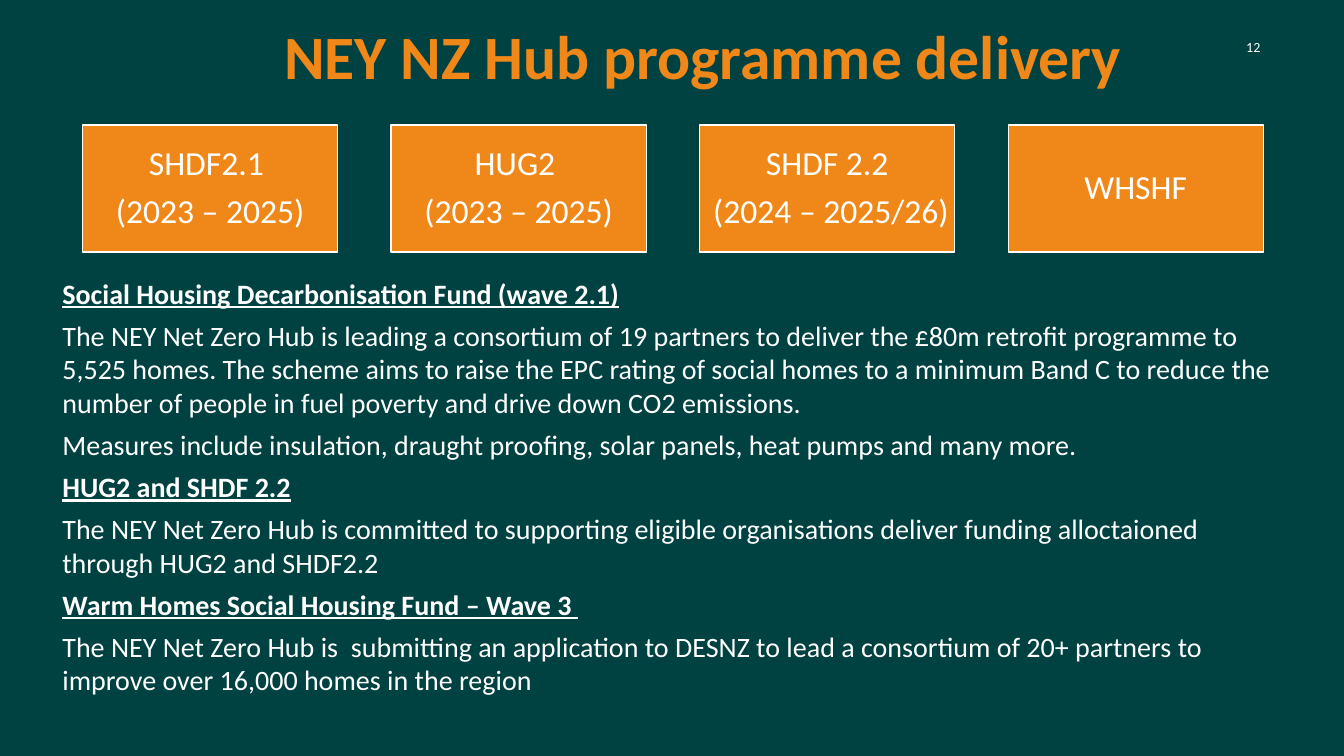
import dataclasses

import pptx
import pptx.dml.color
import pptx.enum.shapes
import pptx.enum.text
import pptx.util

Inches = pptx.util.Inches
Align = pptx.enum.text.PP_ALIGN
Anchor = pptx.enum.text.MSO_ANCHOR


@dataclasses.dataclass(frozen=True)
class Theme:
    font: str = "Calibri"
    background: str = "004141"
    accent: str = "F08719"
    light: str = "FFFFFF"
    title_size: int = 44
    card_size: int = 24
    body_size: int = 20
    number_size: int = 10


def rgb(value):
    return pptx.dml.color.RGBColor.from_string(value)


def write_paragraph(paragraph, text, *, font, size, color, heading=False,
                    align=Align.LEFT, line_spacing=1.0, space_after=0, indent=0):
    paragraph.alignment = align
    paragraph.line_spacing = line_spacing
    paragraph.space_after = pptx.util.Pt(space_after)
    if indent:
        properties = paragraph._p.get_or_add_pPr()
        properties.set("marL", str(Inches(indent)))
        properties.set("indent", "0")
    run = paragraph.add_run()
    run.text = text
    run.font.name = font
    run.font.size = pptx.util.Pt(size)
    run.font.color.rgb = rgb(color)
    run.font.bold = heading
    run.font.underline = heading


class SlideBuilder:
    def __init__(self, slide, theme):
        self.slide = slide
        self.theme = theme
        fill = slide.background.fill
        fill.solid()
        fill.fore_color.rgb = rgb(theme.background)

    def fill_frame(self, frame, texts, margins, headings=(), **text_format):
        frame.word_wrap = True
        frame.margin_left = frame.margin_right = Inches(margins[0])
        frame.margin_top = frame.margin_bottom = Inches(margins[1])
        for index, text in enumerate(texts):
            paragraph = frame.add_paragraph() if index else frame.paragraphs[0]
            write_paragraph(paragraph, text, font=self.theme.font,
                            heading=text in headings, **text_format)

    def text_box(self, box, texts, margins=(0, 0), **text_format):
        shape = self.slide.shapes.add_textbox(*map(Inches, box))
        self.fill_frame(shape.text_frame, texts, margins, **text_format)
        return shape

    def card(self, box, texts):
        shape = self.slide.shapes.add_shape(
            pptx.enum.shapes.MSO_SHAPE.RECTANGLE, *map(Inches, box))
        shape.shadow.inherit = False
        shape.fill.solid()
        shape.fill.fore_color.rgb = rgb(self.theme.accent)
        shape.line.color.rgb = rgb(self.theme.light)
        shape.line.width = pptx.util.Pt(1)
        shape.text_frame.vertical_anchor = Anchor.MIDDLE
        self.fill_frame(shape.text_frame, texts, (0.02, 0.02),
                        size=self.theme.card_size, color=self.theme.light,
                        align=Align.CENTER, line_spacing=0.9, space_after=8.4)

    def title(self, box, text):
        shape = self.text_box(box, [text], size=self.theme.title_size,
                              color=self.theme.accent, line_spacing=0.9)
        run = shape.text_frame.paragraphs[0].runs[0]
        run.font.bold = True

    def page_number(self, box, text):
        self.text_box(box, [text], size=self.theme.number_size,
                      color=self.theme.light, align=Align.RIGHT)

    def body(self, box, sections):
        texts = [text for heading, details in sections for text in (heading, *details)]
        self.text_box(box, texts, (0.1, 0.05),
                      headings=[heading for heading, _ in sections],
                      size=self.theme.body_size, color=self.theme.light,
                      space_after=6, indent=0.25)


PROGRAMMES = [
    ["SHDF2.1 ", "(2023 – 2025)"],
    ["HUG2 ", "(2023 – 2025)"],
    ["SHDF 2.2", " (2024 – 2025/26)"],
    ["WHSHF"],
]

SECTIONS = [
    ("Social Housing Decarbonisation Fund (wave 2.1)", [
        "The NEY Net Zero Hub is leading a consortium of 19 partners to deliver the "
        "£80m retrofit programme to 5,525 homes. The scheme aims to raise the EPC "
        "rating of social homes to a minimum Band C to reduce the number of people "
        "in fuel poverty and drive down CO2 emissions.",
        "Measures include insulation, draught proofing, solar panels, heat pumps "
        "and many more.",
    ]),
    ("HUG2 and SHDF 2.2", [
        "The NEY Net Zero Hub is committed to supporting eligible organisations "
        "deliver funding alloctaioned through HUG2 and SHDF2.2",
    ]),
    ("Warm Homes Social Housing Fund – Wave 3 ", [
        "The NEY Net Zero Hub is  submitting an application to DESNZ to lead a "
        "consortium of 20+ partners to improve over 16,000 homes in the region",
    ]),
]


def main():
    presentation = pptx.Presentation()
    presentation.slide_width = Inches(13.33)
    presentation.slide_height = Inches(7.5)
    slide = presentation.slides.add_slide(presentation.slide_layouts[6])
    builder = SlideBuilder(slide, Theme())

    builder.page_number((9.68, 0.38, 2.82, 0.17), "12")
    builder.title((2.82, 0.26, 10.5, 0.98), "NEY NZ Hub programme delivery")
    card_left, card_step = 0.82, 3.06
    for index, texts in enumerate(PROGRAMMES):
        builder.card((card_left + index * card_step, 1.24, 2.53, 1.26), texts)
    builder.body((0.27, 2.69, 12.65, 4.73), SECTIONS)

    presentation.save("out.pptx")


if __name__ == "__main__":
    main()
